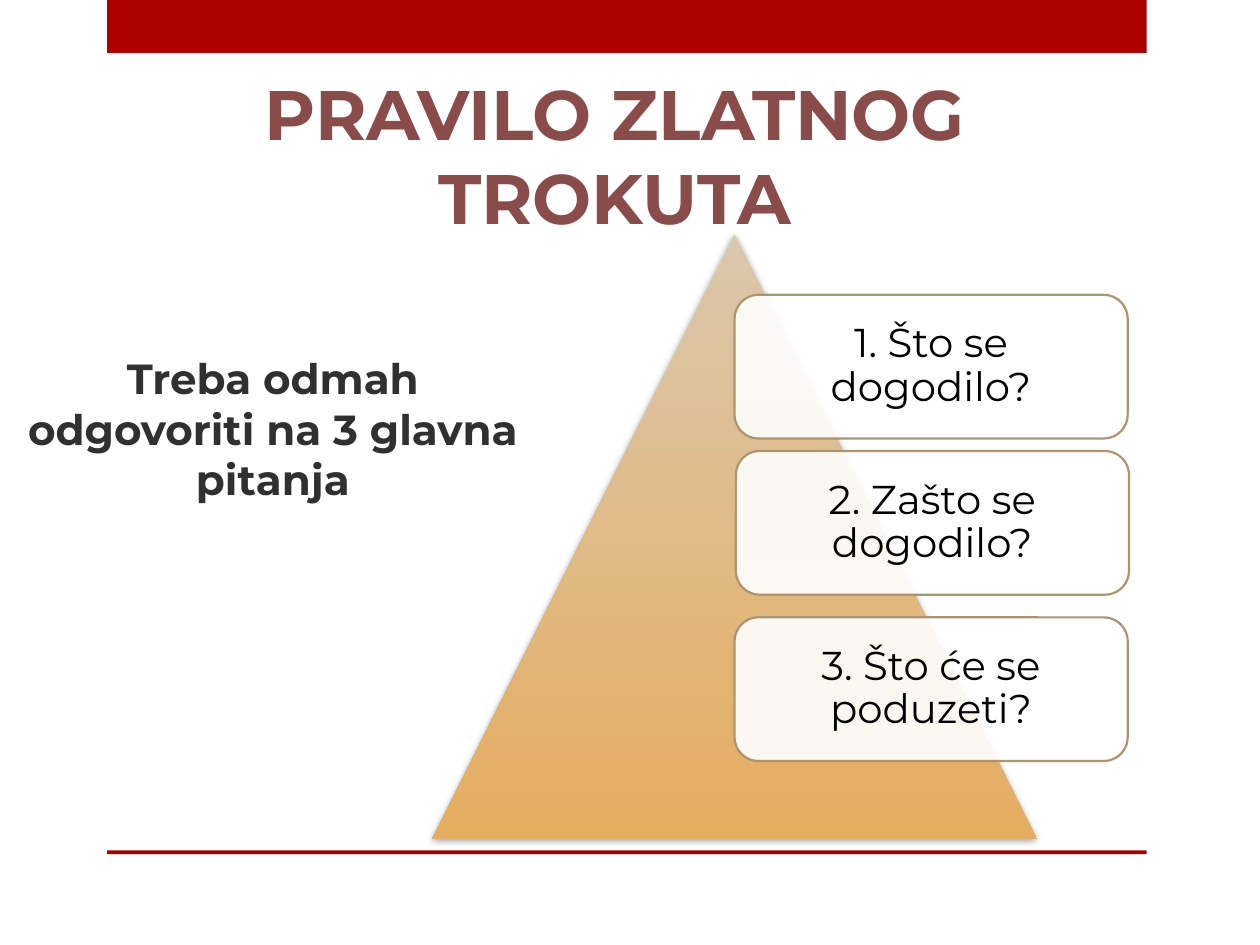
from lxml import etree
from pptx import Presentation
from pptx.dml.color import RGBColor
from pptx.enum.shapes import MSO_SHAPE as Shape
from pptx.enum.text import MSO_ANCHOR as Anchor, PP_ALIGN as Align
from pptx.oxml import parse_xml
from pptx.oxml.ns import nsdecls, qn
from pptx.util import Inches, Pt

FONT = "Montserrat"
COLORS = {
    "red": "AD0101",
    "title": "894C4B",
    "body": "303030",
    "sand": "DBC7AD",
    "orange": "E5AD60",
    "card": "FFFFFF",
    "border": "AC956E",
    "black": "000000",
}
QUESTIONS = [
    (5.83, 2.34, "1. Što se dogodilo?"),
    (5.84, 3.58, "2. Zašto se dogodilo?"),
    (5.83, 4.9, "3. Što će se poduzeti?"),
]


def color(name):
    return RGBColor.from_string(COLORS[name])


def write(shape, text, size, ink, bold=False, anchor=Anchor.MIDDLE):
    """Put one centred, wrapped paragraph into a shape and return it."""
    frame = shape.text_frame
    frame.word_wrap = True
    frame.vertical_anchor = anchor
    para = frame.paragraphs[0]
    para.text = text
    para.alignment = Align.CENTER
    para.font.name = FONT
    para.font.size = Pt(size)
    para.font.bold = bold
    para.font.color.rgb = color(ink)
    return para


def add_text(page, left, top, width, height, *text, **style):
    box = page.shapes.add_textbox(Inches(left), Inches(top), Inches(width), Inches(height))
    write(box, *text, **style)
    return box


def add_plain_shape(page, kind, left, top, width, height):
    shape = page.shapes.add_shape(
        kind, Inches(left), Inches(top), Inches(width), Inches(height))
    shape.shadow.inherit = False
    shape.line.fill.background()
    return shape


def add_bar(page, top, height):
    bar = add_plain_shape(page, Shape.RECTANGLE, 0.85, top, 8.25, height)
    bar.fill.solid()
    bar.fill.fore_color.rgb = color("red")


def add_triangle(page):
    triangle = add_plain_shape(page, Shape.ISOSCELES_TRIANGLE, 3.43, 1.86, 4.8, 4.8)
    triangle.fill.gradient()
    triangle.fill.gradient_angle = 270
    for stop, position, name in zip(triangle.fill.gradient_stops, (0, 1), ("sand", "orange")):
        stop.position = position
        stop.color.rgb = color(name)
    effects = triangle._element.spPr.find(qn("a:effectLst"))
    effects.append(parse_xml(
        f'<a:outerShdw {nsdecls("a")} blurRad="{Pt(4)}" dist="{Pt(1)}" dir="5280000" '
        f'rotWithShape="0"><a:srgbClr val="{COLORS["black"]}"><a:alpha val="40000"/>'
        '</a:srgbClr></a:outerShdw>'))


def add_question(page, left, top, text):
    card = add_plain_shape(page, Shape.ROUNDED_RECTANGLE, left, top, 3.12, 1.14)
    card.fill.solid()
    card.fill.fore_color.rgb = color("card")
    tint = card._element.spPr.find(qn("a:solidFill")).find(qn("a:srgbClr"))
    etree.SubElement(tint, qn("a:alpha"), val="90000")
    card.line.color.rgb = color("border")
    card.line.width = Pt(1.25)
    frame = card.text_frame
    frame.margin_left = frame.margin_right = Inches(0.1)
    frame.margin_top = frame.margin_bottom = Inches(0.1)
    write(card, text, 23, "black").line_spacing = 0.9


def main():
    deck = Presentation()
    deck.slide_width, deck.slide_height = Inches(10), Inches(7.5)
    page = deck.slides.add_slide(deck.slide_layouts[6])

    add_bar(page, 0, 0.42)
    add_bar(page, 6.75, 0.03)
    add_text(page, 0.83, 0.52, 8.1, 1.42, "PRAVILO ZLATNOG TROKUTA", 40, "title",
             bold=True, anchor=Anchor.BOTTOM)
    prompt = add_text(page, 0.12, 2.57, 4.09, 2.28,
                      "Treba odmah odgovoriti na 3 glavna pitanja", 24, "body", bold=True)
    prompt.text_frame.margin_bottom = Inches(0.67)
    add_triangle(page)
    for question in QUESTIONS:
        add_question(page, *question)

    deck.save("out.pptx")


if __name__ == "__main__":
    main()
